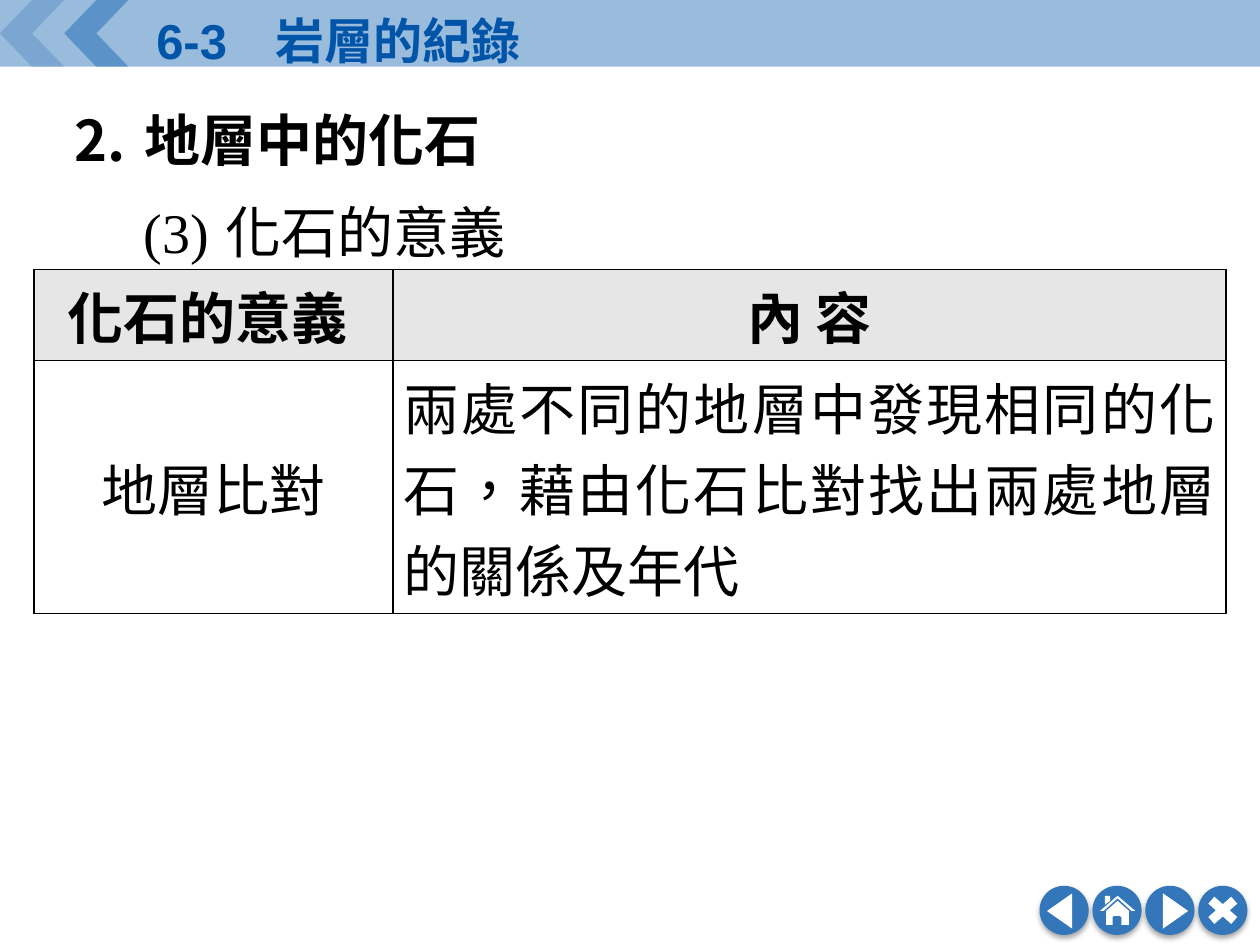
from lxml import etree
from pptx import Presentation
from pptx.dml.color import RGBColor
from pptx.enum import lang, shapes as sh, text as tx
from pptx.oxml import ns
from pptx.util import Inches, Pt

W, H = 10, 7.5
BLUE, DISC, GREY, BLACK, WHITE = "0055A9", "3377BA", "E6E6E6", "000000", "FFFFFF"
KIND = sh.MSO_SHAPE
ALIGN = tx.PP_ALIGN


def color(code):
    return RGBColor.from_string(code)


def sub(node, tag, **attrs):
    return etree.SubElement(node, ns.qn("a:" + tag), attrs)


def flip(shape):
    shape._element.spPr.find(ns.qn("a:xfrm")).set("flipH", "1")


def paint(shape, code, alpha=None):
    """Flat fill without line or shadow; alpha is a percentage."""
    shape.shadow.inherit = False
    shape.fill.solid()
    shape.fill.fore_color.rgb = color(code)
    shape.line.fill.background()
    if alpha:
        tone = shape._element.spPr.find(".//" + ns.qn("a:srgbClr"))
        sub(tone, "alpha", val=str(alpha * 1000))


def place(slide, kind, box, code, alpha=None):
    shape = slide.shapes.add_shape(kind, *map(Inches, box))
    paint(shape, code, alpha)
    return shape


def write(par, words, size, font, code=BLACK, bold=False):
    run = par.add_run()
    run.text = words
    face = run.font
    face.size, face.name, face.bold = Pt(size), font, bold
    face.color.rgb = color(code)
    face.language_id = lang.MSO_LANGUAGE_ID.TRADITIONAL_CHINESE
    run._r.rPr.set("altLang", "en-US")


def header(slide, x, y, w, h):
    place(slide, KIND.RECTANGLE, (x, y, w, h), BLUE, 40)
    step = 0.51
    for i, alpha in enumerate((20, 40)):
        flip(place(slide, KIND.CHEVRON, (x + i * step, y, step, h), BLUE, alpha))
    title = slide.shapes.title
    title.left, title.top, title.width, title.height = map(
        Inches, (x + 1.14, y + 0.03, 4.33, 0.57))
    frame = title.text_frame
    frame.auto_size = tx.MSO_AUTO_SIZE.NONE
    frame.vertical_anchor = tx.MSO_ANCHOR.TOP
    par = frame.paragraphs[0]
    par.alignment = ALIGN.LEFT
    write(par, "6-3　岩層的紀錄", 28, "Arial", BLUE, True)


def outline(slide, x, y, w, h):
    frame = slide.shapes.add_textbox(*map(Inches, (x, y, w, h))).text_frame
    frame.word_wrap = True
    rows = (("地層中的化石", 0.56, 0.56, True), ("(3)\t化石的意義", 1.2, 0.65, False))
    for i, (words, left, hang, bold) in enumerate(rows):
        par = frame.add_paragraph() if i else frame.paragraphs[0]
        par.alignment = ALIGN.JUSTIFY
        par.line_spacing = 1.2
        par.space_before = Pt(6.4)
        props = par._p.get_or_add_pPr()
        props.set("marL", str(Inches(left)))
        props.set("indent", str(-Inches(hang)))
        if bold:
            sub(props, "buFont", typeface="Times New Roman")
            sub(props, "buAutoNum", type="arabicPeriod", startAt="2")
        write(par, words, 32, "Times New Roman", bold=bold)


def border(cell):
    props = cell._tc.get_or_add_tcPr()
    for i, side in enumerate(("lnL", "lnR", "lnT", "lnB")):
        line = etree.Element(ns.qn("a:" + side), w=str(Pt(1)))
        sub(sub(line, "solidFill"), "srgbClr", val=BLACK)
        props.insert(i, line)


def grid(slide, x, y, cols, rows):
    cells = (("化石的意義 ", "內 容"),
             ("地層比對", "兩處不同的地層中發現相同的化石，藉由化石比對找出兩處地層的關係及年代"))
    table = slide.shapes.add_table(
        len(rows), len(cols), *map(Inches, (x, y, sum(cols), sum(rows)))).table
    for col, wide in zip(table.columns, cols):
        col.width = Inches(wide)
    for r, line in enumerate(cells):
        table.rows[r].height = Inches(rows[r])
        for c, words in enumerate(line):
            cell = table.cell(r, c)
            cell.fill.solid()
            cell.fill.fore_color.rgb = color(WHITE if r else GREY)
            cell.vertical_anchor = tx.MSO_ANCHOR.MIDDLE
            cell.margin_left = cell.margin_top = cell.margin_bottom = Inches(0.04)
            cell.margin_right = Inches(0.08)
            par = cell.text_frame.paragraphs[0]
            par.alignment = ALIGN.JUSTIFY if r and c else ALIGN.CENTER
            if r:
                par.space_after = Pt(10)
            props = par._p.get_or_add_pPr()
            props.set("marL", str(Inches(0.04)))
            props.set("indent", "0")
            write(par, words, 32, "Times New Roman", bold=not r)
            border(cell)


def disc(slide, x, y, d):
    shape = place(slide, KIND.OVAL, (x, y, d, d), DISC)
    glow = shape._element.spPr.find(ns.qn("a:effectLst"))
    cast = sub(glow, "outerShdw", blurRad=str(Pt(3.1)), dist=str(Pt(1.8)),
               dir="5400000", algn="t", rotWithShape="0")
    sub(sub(cast, "srgbClr", val=BLACK), "alpha", val="35000")


def house(slide, x, y):
    """Home sign: walls with a door, a chimney and two roof slopes."""
    parts = (
        ((14, 4), (23, 12), (23, 23), (17, 23), (17, 17), (16, 16), (11, 16),
         (10, 17), (10, 23), (5, 23), (5, 12)),
        ((4, 0), (8, 0), (8, 4), (4, 7)),
        ((14, 0), (28, 12), (25, 12), (14, 2)),
        ((14, 0), (14, 2), (3, 12), (0, 12)))
    form = None
    for first, *rest in parts:
        if form is None:
            form = slide.shapes.build_freeform(*first, scale=Inches(0.01))
        else:
            form.move_to(*first)
        form.add_line_segments(rest, close=True)
    paint(form.convert_to_shape(Inches(x), Inches(y)), WHITE)


def buttons(slide, x, y, d, step):
    spots = [x + i * step for i in range(4)]
    for spot in spots:
        disc(slide, spot, y, d)
    back, home, on, end = spots
    for left, turn in ((back + 0.02, 270), (on + 0.1, 90)):
        place(slide, KIND.ISOSCELES_TRIANGLE,
              (left, y + 0.1, 0.28, 0.2), WHITE).rotation = turn
    house(slide, home + 0.06, y + 0.08)
    place(slide, KIND.MATH_MULTIPLY, (end + 0.02, y + 0.04, 0.35, 0.31), WHITE)


def main():
    deck = Presentation()
    deck.slide_width, deck.slide_height = Inches(W), Inches(H)
    slide = deck.slides.add_slide(deck.slide_layouts[5])
    header(slide, 0, 0, W, 0.53)
    outline(slide, 0.49, 0.68, 9.06, 0.64)
    grid(slide, 0.27, 2.14, (2.85, 6.61), (0.72, 2.01))
    buttons(slide, 8.25, 7.03, 0.39, 0.42)
    # The title is drawn above the header band.
    tree = slide.shapes._spTree
    tree.append(slide.shapes.title._element)
    deck.save("out.pptx")


if __name__ == "__main__":
    main()
